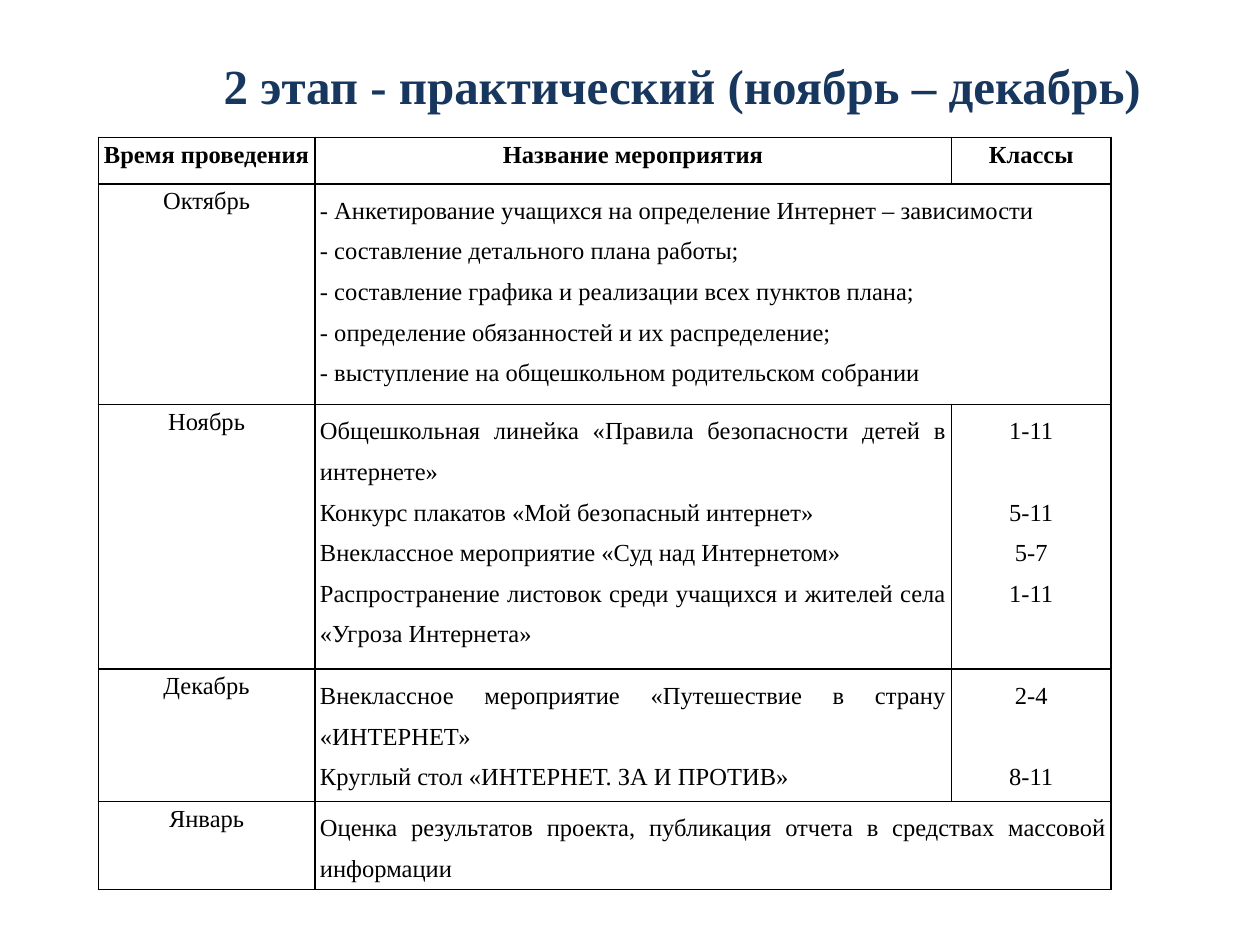
from lxml.etree import SubElement
from pptx import Presentation
from pptx.dml.color import RGBColor
from pptx.enum.text import MSO_ANCHOR, MSO_AUTO_SIZE, PP_ALIGN
from pptx.oxml.ns import qn
from pptx.util import Inches, Pt

COLORS = {"title": "17375E", "ink": "000000"}
FONT = "Times New Roman"
GAP = 23.2  # one text line at 1.5 spacing, in points

COLS = [1.72, 5.05, 1.27]
ROWS = [0.37, 1.75, 2.1, 1.05, 0.7]
HEADS = ["Время проведения", "Название мероприятия", "Классы"]
# Month, events, classes (None: events span both columns), classes after a gap
PLAN = [
    ("Октябрь", [
        "- Анкетирование учащихся на определение Интернет – зависимости",
        "- составление детального плана работы;",
        "- составление графика и реализации всех пунктов плана;",
        "- определение обязанностей и их распределение;",
        "- выступление на общешкольном родительском собрании"], None),
    ("Ноябрь", [
        "Общешкольная линейка «Правила безопасности детей в интернете»",
        "Конкурс плакатов «Мой безопасный интернет»",
        "Внеклассное мероприятие «Суд над Интернетом»",
        "Распространение листовок среди учащихся и жителей села "
        "«Угроза Интернета»"], ["1-11", "5-11", "5-7", "1-11"]),
    ("Декабрь", [
        "Внеклассное мероприятие «Путешествие в страну «ИНТЕРНЕТ»",
        "Круглый стол «ИНТЕРНЕТ. ЗА И ПРОТИВ»"], ["2-4", "8-11"]),
    ("Январь", [
        "Оценка результатов проекта, публикация отчета в средствах "
        "массовой информации"], None),
]


def write(frame, lines, size=14, bold=False, color="ink",
          align=PP_ALIGN.CENTER, spacing=1.15, gaps=()):
    """Fill a text frame; gaps holds the lines that get space before."""
    for i, line in enumerate(lines):
        para = frame.paragraphs[0] if i == 0 else frame.add_paragraph()
        para.alignment = align
        para.line_spacing = spacing
        if i in gaps:
            para.space_before = Pt(GAP)
        run = para.add_run()
        run.text = line
        run.font.name = FONT
        run.font.size = Pt(size)
        run.font.bold = bold
        run.font.color.rgb = RGBColor.from_string(COLORS[color])


def style(cell):
    """Give a cell thin borders, narrow margins and no fill."""
    props = cell._tc.get_or_add_tcPr()
    for side in ("lnL", "lnR", "lnT", "lnB"):
        line = SubElement(props, qn(f"a:{side}"), w=str(Pt(1)))
        fill = SubElement(line, qn("a:solidFill"))
        SubElement(fill, qn("a:srgbClr"), val=COLORS["ink"])
    cell.fill.background()
    cell.margin_left = cell.margin_right = Inches(0.04)
    cell.margin_top = cell.margin_bottom = 0


def add_title(slide, x, y, w, h):
    box = slide.shapes.add_textbox(Inches(x), Inches(y), Inches(w), Inches(h))
    frame = box.text_frame
    frame.word_wrap = False
    frame.auto_size = MSO_AUTO_SIZE.SHAPE_TO_FIT_TEXT
    frame.vertical_anchor = MSO_ANCHOR.MIDDLE
    write(frame, ["2 этап - практический (ноябрь – декабрь)"],
          size=28, bold=True, color="title", spacing=1.0)
    props = frame.paragraphs[0]._p.get_or_add_pPr()
    props.set("indent", str(Inches(0.49)))


def add_plan(slide, x, y, w, h):
    table = slide.shapes.add_table(
        len(ROWS), len(COLS), Inches(x), Inches(y), Inches(w), Inches(h)).table
    table.first_row = table.horz_banding = False
    for col, width in zip(table.columns, COLS):
        col.width = Inches(width)
    for row, height in zip(table.rows, ROWS):
        row.height = Inches(height)
    for cell in table.iter_cells():
        style(cell)

    # Header row
    for i, head in enumerate(HEADS):
        write(table.cell(0, i).text_frame, [head], bold=True)

    # One row for each month
    for i, (month, events, classes) in enumerate(PLAN, 1):
        name, event, group = (table.cell(i, j) for j in range(3))
        write(name.text_frame, [month])
        if classes is None:
            event.merge(group)
        else:
            write(group.text_frame, classes, spacing=1.5, gaps=(1,))
        write(event.text_frame, events, align=PP_ALIGN.JUSTIFY, spacing=1.5)


def main():
    deck = Presentation()
    deck.slide_width, deck.slide_height = Inches(10), Inches(7.5)
    slide = deck.slides.add_slide(deck.slide_layouts[6])
    add_title(slide, 1.09, 0.39, 8.16, 0.57)
    add_plan(slide, 0.78, 1.09, sum(COLS), sum(ROWS))
    deck.save("out.pptx")


if __name__ == "__main__":
    main()
